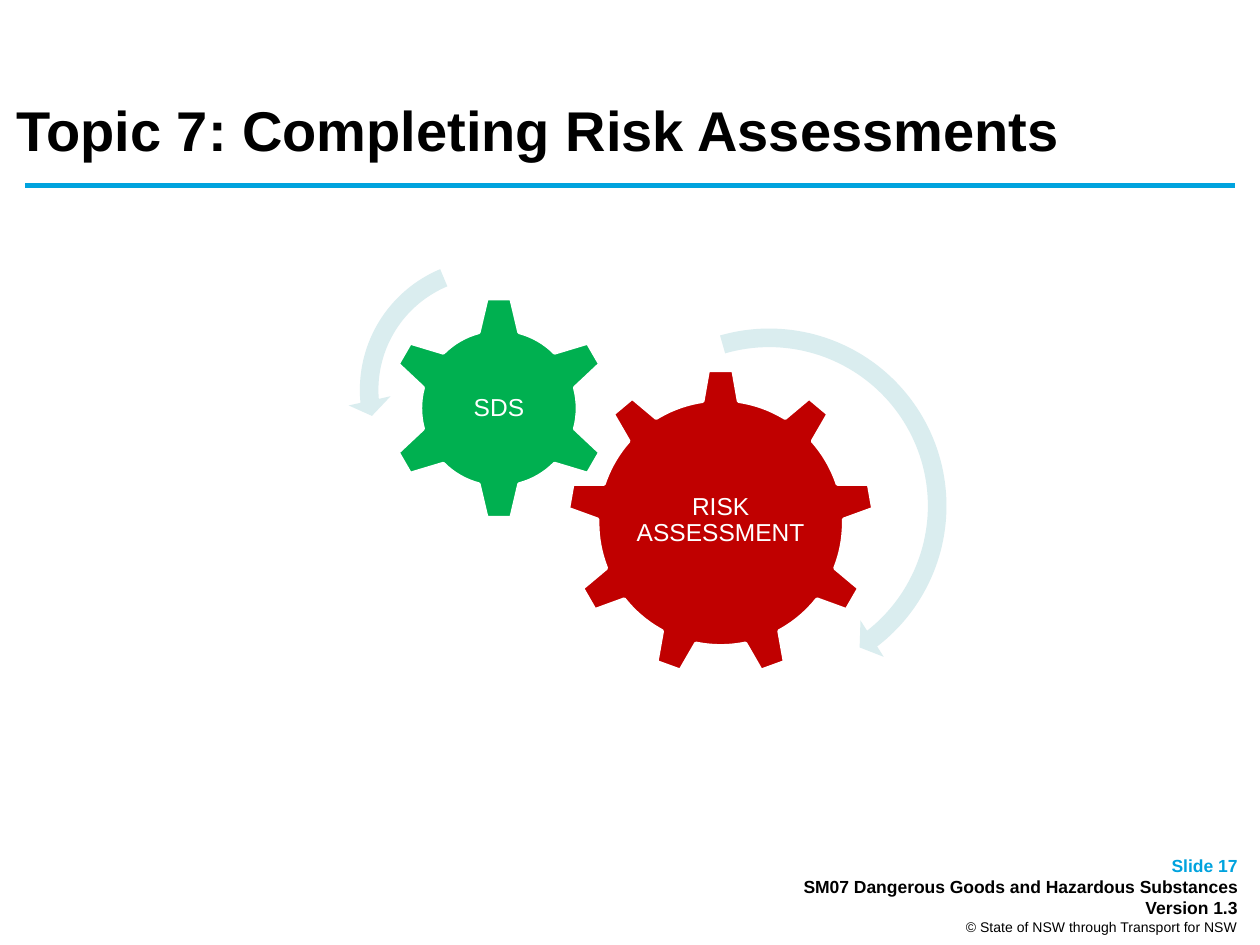
from typing import NamedTuple

from lxml.etree import SubElement
from pptx import Presentation
from pptx.dml.color import RGBColor
from pptx.enum.shapes import MSO_CONNECTOR, MSO_SHAPE
from pptx.enum.text import MSO_ANCHOR as Anchor, MSO_AUTO_SIZE, PP_ALIGN as Align
from pptx.oxml.ns import qn
from pptx.util import Inches, Pt

FONT = "Arial"
BLACK, WHITE, BLUE, PALE = "000000", "FFFFFF", "00A3DE", "DAEDEF"


class Area(NamedTuple):
    left: float
    top: float
    width: float
    height: float

    def lengths(self) -> list:
        return [Inches(value) for value in self]


class Gear(NamedTuple):
    kind: MSO_SHAPE
    area: Area
    color: str
    label: str
    label_area: Area


class Arrow(NamedTuple):
    kind: MSO_SHAPE
    area: Area
    adjustments: tuple


class Line(NamedTuple):
    text: str
    size: int
    color: str
    bold: bool


GEARS = [
    Gear(MSO_SHAPE.GEAR_9, Area(4.5, 2.93, 2.44, 2.44), "C00000",
         "RISK ASSESSMENT", Area(4.99, 3.5, 1.46, 1.26)),
    Gear(MSO_SHAPE.GEAR_6, Area(3.07, 2.35, 1.78, 1.78), "00B050",
         "SDS", Area(3.52, 2.8, 0.88, 0.88)),
]
ARROWS = [
    Arrow(MSO_SHAPE.CIRCULAR_ARROW, Area(4.6, 2.51, 3.01, 3.01),
          (0.049, 3.126, 31.333, 152.342, 0.057)),
    Arrow(MSO_SHAPE.LEFT_CIRCULAR_ARROW, Area(2.76, 1.96, 2.27, 2.27),
          (0.065, 4.3, 104.891, 148.378, 0.075)),
]
FOOTER = [
    Line("Slide 17", 10, BLUE, True),
    Line("SM07 Dangerous Goods and Hazardous Substances", 10, BLACK, True),
    Line("Version 1.3", 10, BLACK, True),
    Line("© State of NSW through Transport for NSW", 8, BLACK, False),
]


def rgb(color: str) -> RGBColor:
    return RGBColor.from_string(color)


def write_lines(frame, lines: list, align: Align, anchor: Anchor) -> None:
    frame.word_wrap = True
    frame.auto_size = MSO_AUTO_SIZE.NONE
    frame.vertical_anchor = anchor
    for index, line in enumerate(lines):
        para = frame.add_paragraph() if index else frame.paragraphs[0]
        para.alignment = align
        span = para.add_run()
        span.text = line.text
        span.font.name = FONT
        span.font.size = Pt(line.size)
        span.font.bold = line.bold
        span.font.color.rgb = rgb(line.color)


def draw_shape(page, kind: MSO_SHAPE, area: Area, color: str):
    shape = page.shapes.add_shape(kind, *area.lengths())
    shape.shadow.inherit = False
    shape.fill.solid()
    shape.fill.fore_color.rgb = rgb(color)
    shape.line.fill.background()
    return shape


def draw_gear(page, gear: Gear) -> None:
    shape = draw_shape(page, gear.kind, gear.area, gear.color)
    shape.line.color.rgb = rgb(WHITE)
    shape.line.width = Pt(2)
    frame = page.shapes.add_textbox(*gear.label_area.lengths()).text_frame
    frame.margin_left = frame.margin_right = Inches(0.02)
    frame.margin_top = frame.margin_bottom = Inches(0.02)
    write_lines(frame, [Line(gear.label, 14, WHITE, False)], Align.CENTER, Anchor.MIDDLE)
    frame.paragraphs[0].line_spacing = 0.9


def draw_arrow(page, arrow: Arrow) -> None:
    shape = draw_shape(page, arrow.kind, arrow.area, PALE)
    for index, value in enumerate(arrow.adjustments):
        shape.adjustments[index] = value


def draw_rule(page, left: float, right: float, y: float) -> None:
    rule = page.shapes.add_connector(
        MSO_CONNECTOR.STRAIGHT, Inches(left), Inches(y), Inches(right), Inches(y))
    rule.line.color.rgb = rgb(BLUE)
    rule.line.width = Pt(3)
    SubElement(rule._element.spPr, qn("a:effectLst"))


def main() -> None:
    deck = Presentation()
    deck.slide_width, deck.slide_height = Inches(10), Inches(7.5)
    page = deck.slides.add_slide(deck.slide_layouts[5])

    # Title and rule
    title = page.shapes.title
    title.left, title.top, title.width, title.height = Area(0.03, 0.4, 9.25, 1.25).lengths()
    write_lines(title.text_frame, [Line("Topic 7: Completing Risk Assessments", 32, BLACK, True)],
                Align.LEFT, Anchor.MIDDLE)
    draw_rule(page, 0.2, 9.8, 1.47)

    # Gears and their turning arrows
    for gear in GEARS:
        draw_gear(page, gear)
    for arrow in ARROWS:
        draw_arrow(page, arrow)

    # Footer
    footer = page.shapes.add_textbox(*Area(5.55, 6.74, 4.37, 0.76).lengths())
    write_lines(footer.text_frame, FOOTER, Align.RIGHT, Anchor.TOP)

    deck.save("out.pptx")


if __name__ == "__main__":
    main()
